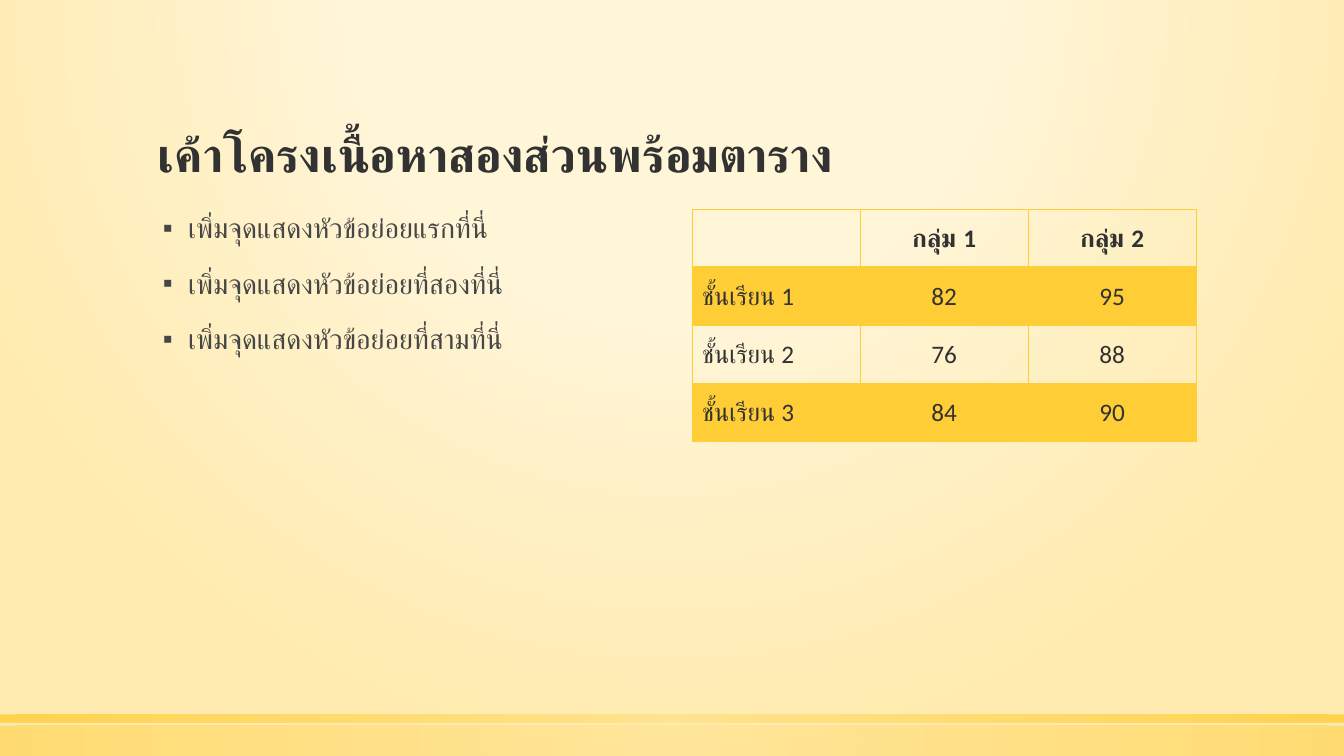
import pptx
import pptx.util
import pptx.dml.color
import pptx.enum.shapes
import pptx.enum.text
import pptx.oxml
import pptx.oxml.ns

SLIDE_WIDTH, SLIDE_HEIGHT = 13.33, 7.5
COLORS = {
    "title": "323232",
    "body": "464646",
    "gold": "FFCD36",
    "light_gold": "FFE186",
    "cream": "FFF5D7",
    "sand": "FFEBAF",
}
FONT = "Calibri"
ANCHOR = pptx.enum.text.MSO_ANCHOR
ALIGN = pptx.enum.text.PP_ALIGN
qn = pptx.oxml.ns.qn

TITLE = "เค้าโครงเนื้อหาสองส่วนพร้อมตาราง"
POINTS = [
    "เพิ่มจุดแสดงหัวข้อย่อยแรกที่นี่",
    "เพิ่มจุดแสดงหัวข้อย่อยที่สองที่นี่",
    "เพิ่มจุดแสดงหัวข้อย่อยที่สามที่นี่",
]
SCORES = [
    ["", "กลุ่ม 1", "กลุ่ม 2"],
    ["ชั้นเรียน 1", "82", "95"],
    ["ชั้นเรียน 2", "76", "88"],
    ["ชั้นเรียน 3", "84", "90"],
]


def share_box(left, top, width, height):
    return [
        pptx.util.Inches(share * side)
        for share, side in zip(
            (left, top, width, height), (SLIDE_WIDTH, SLIDE_HEIGHT) * 2
        )
    ]


def place(part, box):
    part.left, part.top, part.width, part.height = box


def xml(tag, attributes="", inner=""):
    return pptx.oxml.parse_xml(
        f'<a:{tag} {pptx.oxml.ns.nsdecls("a")} {attributes}>{inner}</a:{tag}>'
    )


def set_glow(fill, parent, stops, top, bottom):
    fill.solid()
    stop_xml = "".join(
        f'<a:gs pos="{position * 1000}"><a:srgbClr val="{COLORS[name]}">'
        f'<a:alpha val="{alpha * 1000}"/></a:srgbClr></a:gs>'
        for position, name, alpha in stops
    )
    focus = (
        '<a:path path="circle"><a:fillToRect l="50000" r="50000" '
        f't="{top * 1000}" b="{bottom * 1000}"/></a:path>'
    )
    solid = parent.find(qn("a:solidFill"))
    parent.replace(
        solid, xml("gradFill", 'rotWithShape="1"', f"<a:gsLst>{stop_xml}</a:gsLst>{focus}")
    )


def write(paragraph, text, size, color, bold=False, align=ALIGN.LEFT,
          line_spacing=None, space_before=0, bullet=None):
    if bullet:
        properties = paragraph._p.get_or_add_pPr()
        properties.set("marL", str(pptx.util.Inches(0.3)))
        properties.set("indent", str(pptx.util.Inches(-0.25)))
        properties.append(xml("buFont", 'typeface="Arial"'))
        properties.append(xml("buChar", f'char="{bullet}"'))
    paragraph.alignment = align
    paragraph.space_before = pptx.util.Pt(space_before)
    if line_spacing:
        paragraph.line_spacing = line_spacing
    run = paragraph.add_run()
    run.text = text
    run.font.name = FONT
    run.font.size = pptx.util.Pt(size)
    run.font.bold = bold
    run.font.color.rgb = pptx.dml.color.RGBColor.from_string(COLORS[color])


def draw_background(slide):
    fill = slide.background.fill
    fill.solid()
    backdrop = slide._element.find(".//" + qn("p:bgPr"))
    stops = [(0, "cream", 59), (40, "cream", 66), (100, "sand", 100)]
    set_glow(fill, backdrop, stops, -80, 180)


def draw_band(slide, box, alpha):
    band = slide.shapes.add_shape(pptx.enum.shapes.MSO_SHAPE.RECTANGLE, *box)
    band.shadow.inherit = False
    band.line.fill.background()
    stops = [(0, "light_gold", alpha), (100, "gold", alpha)]
    set_glow(band.fill, band._element.spPr, stops, 50, 50)


def draw_title(slide, box):
    title = slide.shapes.title
    place(title, box)
    frame = title.text_frame
    frame.auto_size = pptx.enum.text.MSO_AUTO_SIZE.NONE
    frame.vertical_anchor = ANCHOR.BOTTOM
    write(frame.paragraphs[0], TITLE, 34, "title", bold=True, line_spacing=0.9)


def draw_points(slide, box):
    points = slide.placeholders[1]
    place(points, box)
    frame = points.text_frame
    frame.auto_size = pptx.enum.text.MSO_AUTO_SIZE.NONE
    frame.vertical_anchor = ANCHOR.TOP
    for index, point in enumerate(POINTS):
        paragraph = frame.add_paragraph() if index else frame.paragraphs[0]
        write(paragraph, point, 20, "body", line_spacing=0.9,
              space_before=18 if index else 0, bullet="▪")


def set_borders(cell, widths):
    for side, width in widths.items():
        color = f'<a:solidFill><a:srgbClr val="{COLORS["gold"]}"/></a:solidFill>'
        cell._tc.get_or_add_tcPr().append(
            xml(f"ln{side}", f'w="{pptx.util.Pt(width)}"', color)
        )


def shade(cell, banded):
    if not banded:
        cell.fill.background()
        return
    cell.fill.solid()
    cell.fill.fore_color.rgb = pptx.dml.color.RGBColor.from_string(COLORS["gold"])
    cell._tc.tcPr.find(".//" + qn("a:srgbClr")).append(xml("alpha", 'val="20000"'))


def draw_scores(slide, box):
    scores = slide.shapes.add_table(len(SCORES), len(SCORES[0]), *box).table
    scores.first_row = False
    scores.horz_banding = False
    for row, values in enumerate(SCORES):
        for column, value in enumerate(values):
            cell = scores.cell(row, column)
            cell.vertical_anchor = ANCHOR.MIDDLE
            set_borders(cell, {"L": 1, "R": 1, "T": 2 if row == 1 else 1,
                               "B": 2 if row == 0 else 1})
            shade(cell, row % 2 == 1)
            if value:
                write(cell.text_frame.paragraphs[0], value, 18, "title",
                      bold=row == 0, align=ALIGN.CENTER if column else ALIGN.LEFT)


def main():
    deck = pptx.Presentation()
    deck.slide_width = pptx.util.Inches(SLIDE_WIDTH)
    deck.slide_height = pptx.util.Inches(SLIDE_HEIGHT)
    slide = deck.slides.add_slide(deck.slide_layouts[1])
    draw_background(slide)
    draw_band(slide, share_box(0, 0.96, 1, 0.04), 50)
    draw_band(slide, share_box(0, 0.945, 1, 0.011), 80)
    draw_title(slide, share_box(0.11, 0.068, 0.78, 0.18))
    draw_points(slide, share_box(0.11, 0.277, 0.375, 0.601))
    draw_scores(slide, share_box(0.515, 0.277, 0.375, 0.307))
    deck.save("out.pptx")


if __name__ == "__main__":
    main()
